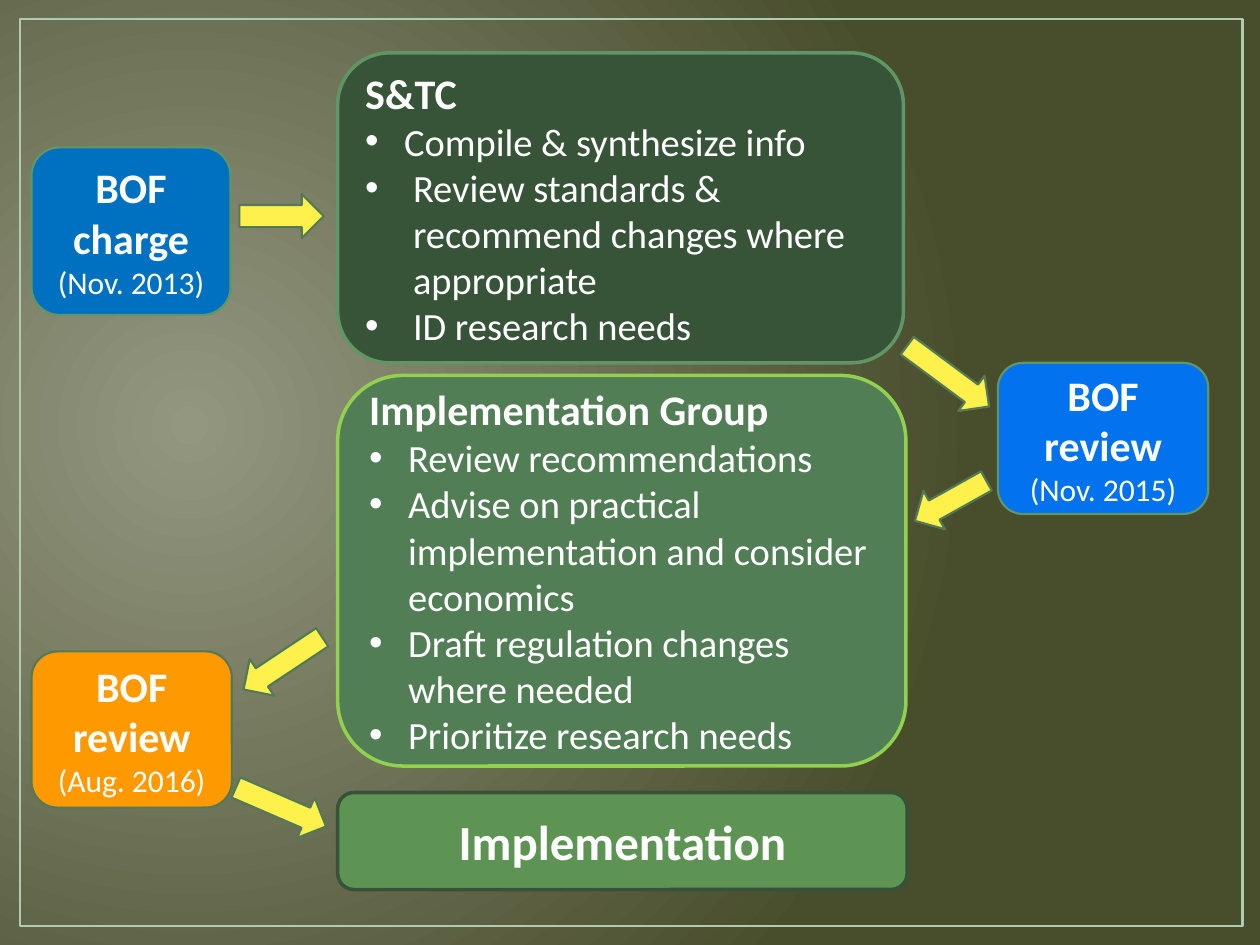
import dataclasses

import pptx
import pptx.dml.color
import pptx.enum.shapes
import pptx.enum.text
import pptx.oxml
import pptx.oxml.ns
import pptx.util

Inches = pptx.util.Inches
Pt = pptx.util.Pt
KINDS = pptx.enum.shapes.MSO_SHAPE
ALIGN = pptx.enum.text.PP_ALIGN
qn = pptx.oxml.ns.qn


@dataclasses.dataclass(frozen=True)
class Theme:
    font: str = "Calibri"
    white: str = "FFFFFF"
    glow: str = "949780"
    olive: str = "484D2C"
    frame: str = "B0CCB0"
    sage: str = "619566"
    moss: str = "547957"
    forest: str = "375439"
    fern: str = "527E56"
    lime: str = "92D050"
    leaf: str = "5D9454"
    pine: str = "38523A"
    blue: str = "0070C0"
    azure: str = "0272EE"
    orange: str = "FF9900"
    yellow: str = "FEF14C"
    final: int = 28
    head: int = 24
    item: int = 22
    date: int = 18
    thin: float = 1.25
    edge: float = 1.5
    thick: float = 2


THEME = Theme()


def rgb(code):
    return pptx.dml.color.RGBColor.from_string(code)


def add_node(parent, tag, **attrs):
    node = pptx.oxml.parse_xml(f"<{tag} {pptx.oxml.ns.nsdecls('a')}/>")
    for name, value in attrs.items():
        node.set(name, value)
    parent.append(node)
    return node


def paint_back(slide):
    """Radial glow that starts near the left edge."""
    fill = slide.background.fill
    fill.gradient()
    for stop, code in zip(fill.gradient_stops, (THEME.glow, THEME.olive)):
        stop.color.rgb = rgb(code)
    grad = slide.element.find(".//" + qn("a:gradFill"))
    grad.remove(grad.find(qn("a:lin")))
    glow = add_node(grad, "a:path", path="circle")
    add_node(glow, "a:fillToRect", l="15000", t="50000", r="85000", b="60000")


def add_shape(slide, kind, place, fill, line, width):
    shape = slide.shapes.add_shape(kind, *map(Inches, place))
    shape.shadow.inherit = False
    if fill:
        shape.fill.solid()
        shape.fill.fore_color.rgb = rgb(fill)
    else:
        shape.fill.background()
    shape.line.color.rgb = rgb(line)
    shape.line.width = Pt(width)
    return shape


def add_box(slide, place, fill, line, width):
    box = add_shape(slide, KINDS.ROUNDED_RECTANGLE, place, fill, line, width)
    box.text_frame.word_wrap = True
    box.text_frame.vertical_anchor = pptx.enum.text.MSO_ANCHOR.MIDDLE
    return box


def style(para, size, bold, align):
    para.alignment = align
    for run in para.runs:
        run.font.name = THEME.font
        run.font.size = Pt(size)
        run.font.bold = bold
        run.font.color.rgb = rgb(THEME.white)


def add_bullet(para, indent):
    props = para._p.get_or_add_pPr()
    props.set("marL", str(Inches(indent)))
    props.set("indent", str(-Inches(indent)))
    add_node(props, "a:buFont", typeface="Arial")
    add_node(props, "a:buChar", char="•")


def add_group(slide, place, fill, line, title, items):
    """Large box: a bold title over bullets given as (text, indent)."""
    frame = add_box(slide, place, fill, line, THEME.thick).text_frame
    frame.text = title
    style(frame.paragraphs[0], THEME.head, True, ALIGN.LEFT)
    for text, indent in items:
        para = frame.add_paragraph()
        para.text = text
        style(para, THEME.item, False, ALIGN.LEFT)
        add_bullet(para, indent)


def add_board(slide, place, fill, line, title, date):
    """Small box: a bold title over its date."""
    frame = add_box(slide, place, fill, line, THEME.thin).text_frame
    frame.text = f"{title}\n{date}"
    first, last = frame.paragraphs
    style(first, THEME.head, True, ALIGN.CENTER)
    style(last, THEME.date, False, ALIGN.CENTER)


def add_arrow(slide, left, top, width, turn):
    arrow = add_shape(slide, KINDS.RIGHT_ARROW, (left, top, width, 0.35),
                      THEME.yellow, THEME.moss, THEME.thin)
    arrow.rotation = turn


def main():
    deck = pptx.Presentation()
    deck.slide_width, deck.slide_height = Inches(10), Inches(7.5)
    slide = deck.slides.add_slide(deck.slide_layouts[6])

    # Background and frame
    paint_back(slide)
    add_shape(slide, KINDS.RECTANGLE, (0.16, 0.15, 9.7, 7.2),
              None, THEME.frame, THEME.edge)

    # Work groups
    add_group(slide, (2.68, 0.42, 4.49, 2.46), THEME.forest, THEME.sage, "S&TC", [
        ("Compile & synthesize info", 0.31),
        ("Review standards & recommend changes where appropriate", 0.38),
        ("ID research needs", 0.38),
    ])
    tasks = (
        "Review recommendations",
        "Advise on practical implementation and consider economics",
        "Draft regulation changes where needed",
        "Prioritize research needs",
    )
    add_group(slide, (2.68, 2.98, 4.51, 3.1), THEME.fern, THEME.lime,
              "Implementation Group", [(task, 0.31) for task in tasks])

    # Board steps
    add_board(slide, (0.25, 1.17, 1.58, 1.33), THEME.blue, THEME.sage,
              "BOF charge", "(Nov. 2013)")
    add_board(slide, (7.92, 2.88, 1.67, 1.2), THEME.azure, THEME.sage,
              "BOF review", "(Nov. 2015)")
    add_board(slide, (0.25, 5.17, 1.59, 1.24), THEME.orange, THEME.moss,
              "BOF review", "(Aug. 2016)")

    # Final step
    final = add_box(slide, (2.68, 6.29, 4.52, 0.77),
                    THEME.leaf, THEME.pine, THEME.thick)
    final.text_frame.text = "Implementation"
    style(final.text_frame.paragraphs[0], THEME.final, True, ALIGN.CENTER)

    # Arrows in order of the process: left, top, width, turn
    for arrow in (
        (1.9, 1.54, 0.67, 0),
        (7.12, 2.81, 0.81, 36.6),
        (7.22, 3.8, 0.65, 150.8),
        (1.87, 5.09, 0.75, 146.4),
        (1.84, 6.23, 0.78, 23.4),
    ):
        add_arrow(slide, *arrow)

    deck.save("out.pptx")


if __name__ == "__main__":
    main()
